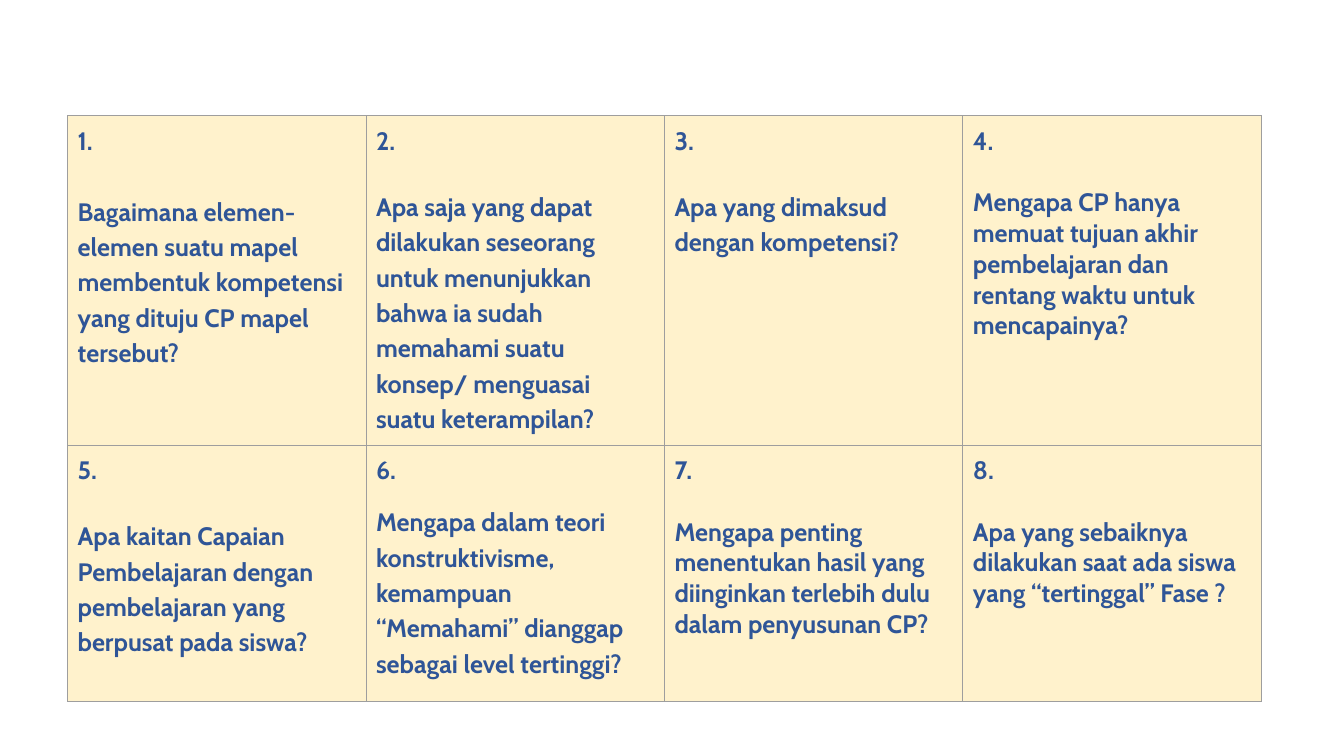
from dataclasses import dataclass

from lxml import etree
from pptx import Presentation
from pptx import util as u
from pptx.dml import color
from pptx.oxml import ns


@dataclass(frozen=True)
class Theme:
    face: str = "Cabin"
    size: int = 18
    ink: str = "2F5597"
    fill: str = "FFF2CC"
    edge: str = "9E9E9E"
    rule: float = 0.75
    pad: float = 0.1


THEME = Theme()
TIGHT, LOOSE = 1.0, 1.15
COLS = [2.96] * 4
ROWS = [3.06, 2.54]
ITEMS = [
    ("Bagaimana elemen-elemen suatu mapel membentuk kompetensi yang dituju CP mapel tersebut?", LOOSE, 25.3),
    ("Apa saja yang dapat dilakukan seseorang untuk menunjukkan bahwa ia sudah memahami suatu konsep/ menguasai suatu keterampilan?", LOOSE, 22),
    ("Apa yang dimaksud dengan kompetensi?", LOOSE, 22),
    ("Mengapa CP hanya memuat tujuan akhir pembelajaran dan rentang waktu untuk mencapainya?", TIGHT, 22),
    ("Apa kaitan Capaian Pembelajaran dengan pembelajaran yang berpusat pada siswa?", LOOSE, 22),
    ("Mengapa dalam teori konstruktivisme, kemampuan “Memahami” dianggap sebagai level tertinggi?", LOOSE, 12),
    ("Mengapa penting menentukan hasil yang diinginkan terlebih dulu dalam penyusunan CP?", TIGHT, 22),
    ("Apa yang sebaiknya dilakukan saat ada siswa yang “tertinggal” Fase ?", TIGHT, 22),
]


def apply(item, values):
    for name, value in values.items():
        setattr(item, name, value)


def write(para, words, line=TIGHT, gap=0):
    apply(para, {"line_spacing": line, "space_before": u.Pt(gap)})
    run = para.add_run()
    run.text = words
    apply(run.font, {"name": THEME.face, "size": u.Pt(THEME.size), "bold": True})
    run.font.color.rgb = color.RGBColor.from_string(THEME.ink)


def frame(cell):
    props = cell._tc.get_or_add_tcPr()
    for index, side in enumerate(("lnL", "lnR", "lnT", "lnB")):
        line = etree.Element(ns.qn(f"a:{side}"), w=str(u.Pt(THEME.rule)))
        solid = etree.SubElement(line, ns.qn("a:solidFill"))
        etree.SubElement(solid, ns.qn("a:srgbClr"), val=THEME.edge)
        props.insert(index, line)


def paint(cell):
    sides = ("left", "right", "top", "bottom")
    apply(cell, {f"margin_{side}": u.Inches(THEME.pad) for side in sides})
    cell.fill.solid()
    cell.fill.fore_color.rgb = color.RGBColor.from_string(THEME.fill)
    frame(cell)


def add_grid(slide, left, top):
    shape = slide.shapes.add_table(
        len(ROWS), len(COLS), u.Inches(left), u.Inches(top),
        u.Inches(sum(COLS)), u.Inches(sum(ROWS)))
    table = shape.table
    apply(table, {"first_row": False, "horz_banding": False})
    for col, width in zip(table.columns, COLS):
        col.width = u.Inches(width)
    for row, height in zip(table.rows, ROWS):
        row.height = u.Inches(height)
    return table


def main():
    deck = Presentation()
    apply(deck, {"slide_width": u.Inches(13.33), "slide_height": u.Inches(7.5)})
    slide = deck.slides.add_slide(deck.slide_layouts[6])
    table = add_grid(slide, 0.67, 1.15)
    for number, (cell, item) in enumerate(zip(table.iter_cells(), ITEMS), 1):
        query, line, gap = item
        paint(cell)
        write(cell.text_frame.paragraphs[0], f"{number}.")
        write(cell.text_frame.add_paragraph(), query, line, gap)
    deck.save("out.pptx")


if __name__ == "__main__":
    main()
